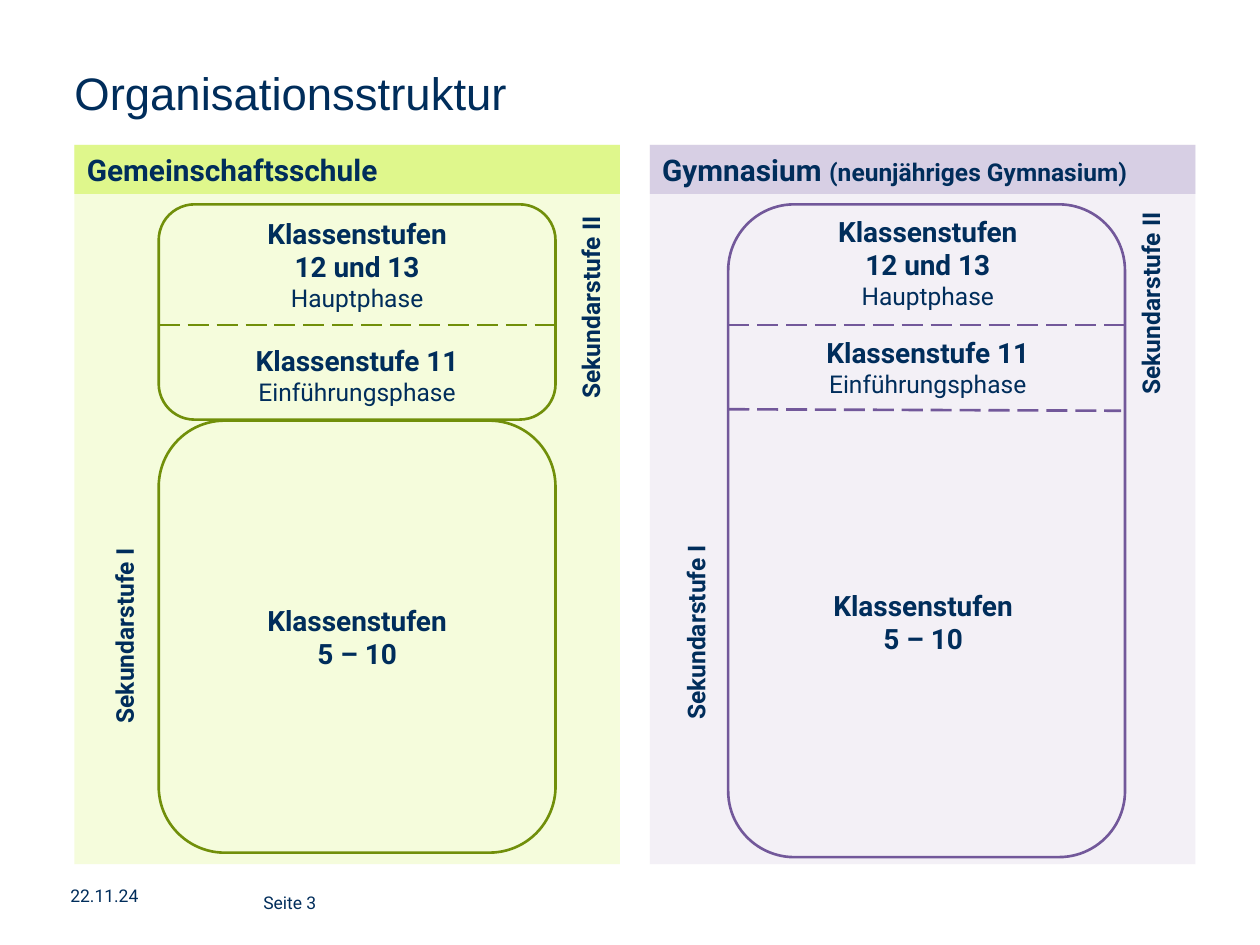
from lxml.etree import SubElement
from pptx import Presentation
from pptx.dml.color import RGBColor as RGB
from pptx.enum.dml import MSO_LINE
from pptx.enum.shapes import MSO_CONNECTOR as Link, MSO_SHAPE as Form
from pptx.enum.text import MSO_ANCHOR as Anchor, MSO_AUTO_SIZE as Fit, PP_ALIGN as Align
from pptx.oxml.ns import qn
from pptx.util import Cm, Pt

COLORS = {
    "navy": "002D5B",
    "lime": "EFFBC6", "lime head": "DFF78C", "lime line": "718F0A",
    "plum": "EBE7F1", "plum head": "D7CFE4", "plum line": "72589A",
}
HUES = {name: RGB.from_string(code) for name, code in COLORS.items()}
INSET = {"margin_left": 0, "margin_right": 0, "margin_top": 0, "margin_bottom": 0}


def write(shape, paras, align=Align.CENTER, gap=0, face="Roboto", **form):
    """Fill a shape with paragraphs, each a list of (text, size, bold)."""
    frame = shape.text_frame
    form = {"word_wrap": True, "vertical_anchor": Anchor.TOP, **form}
    for key, val in form.items():
        setattr(frame, key, val)
    for i, runs in enumerate(paras):
        para = frame.add_paragraph() if i else frame.paragraphs[0]
        para.alignment = align
        if i and gap:
            para.space_before = Pt(gap)
        for j, (text, size, bold) in enumerate(runs):
            for k, line in enumerate(text.split("\n")):
                if k:
                    para.add_line_break()
                if not line:
                    continue
                run = para.add_run()
                run.text = line
                look = {"name": face, "size": Pt(size), "bold": bold}
                for key, val in look.items():
                    setattr(run.font, key, val)
                run.font.color.rgb = HUES["navy"]


def draw(shapes, form, place, fill=None, line=None):
    """Add a preset shape with a plain fill or outline."""
    shape = shapes.add_shape(form, *map(Cm, place))
    shape.shadow.inherit = False
    if fill:
        shape.fill.solid()
        shape.fill.fore_color.rgb = HUES[fill]
    else:
        shape.fill.background()
    if line:
        shape.line.color.rgb = HUES[line]
        shape.line.width = Pt(1.5)
    else:
        shape.line.fill.background()
    return shape


deck = Presentation()
deck.slide_width, deck.slide_height = Cm(25.4), Cm(19.05)
slide = deck.slides.add_slide(deck.slide_layouts[5])

# Title
title = slide.shapes.title
spot = {"left": 1.5, "top": 1.47, "width": 22.4, "height": 2.26}
for key, val in spot.items():
    setattr(title, key, Cm(val))
write(title, [[("Organisationsstruktur", 26, False)]], Align.LEFT, face="Arial",
      auto_size=Fit.NONE, **INSET)
title.text_frame.paragraphs[0].line_spacing = 0.85

# Date and page number
for text, left, top in (("22.11.24", 1.42, 17.75), ("Seite 3", 5.31, 17.88)):
    box = slide.shapes.add_textbox(Cm(left), Cm(top), Cm(3.2), Cm(0.61))
    write(box, [[(text, 10, False)]], Align.LEFT, word_wrap=False,
          vertical_anchor=Anchor.MIDDLE, **INSET)

# Wording shared by both school types
UPPER = [
    [("Klassenstufen\n12 und 13\n", 16, True), ("Hauptphase", 14, False)],
    [("Klassenstufe 11\n", 16, True), ("Einführungsphase", 14, False)],
]
LOWER = [[("Klassenstufen\n5 – 10", 16, True)]]

# One entry per school type; places are left, top, width, height in cm
SCHOOLS = [
    {"hue": "lime", "left": 1.5,
     "head": [("Gemeinschaftsschule", 17, True)],
     "frames": [(3.2, 4.12, 8, 4.34), (3.2, 8.48, 8, 8.71)],
     "dashes": [(3.2, 6.55, 11.2, 6.55)],
     "upper": (3.2, 4.12, 8, 4.34), "gap": 17.7, "inset": 0.24,
     "lower": (3.2, 8.48, 8, 8.71),
     "sides": [("Sekundarstufe II", 11.9, 6.2), ("Sekundarstufe I", 2.5, 12.82)]},
    {"hue": "plum", "left": 13.1,
     "head": [("Gymnasium ", 17, True), ("(neunjähriges Gymnasium)", 14, True)],
     "frames": [(14.68, 4.12, 8, 13.16)],
     "dashes": [(14.68, 6.55, 22.68, 6.55), (14.68, 8.25, 22.6, 8.28)],
     "upper": (15.67, 4.19, 6.07, 5), "gap": 14, "inset": 0.13,
     "lower": (15.7, 11.71, 5.82, 1.65),
     "sides": [("Sekundarstufe II", 23.19, 6.12), ("Sekundarstufe I", 14.02, 12.75)]},
]

for school in SCHOOLS:
    hue, left = school["hue"], school["left"]
    group = slide.shapes.add_group_shape().shapes

    # Pale panel and its heading bar
    panel = draw(group, Form.RECTANGLE, (left, 2.92, 11, 14.5), hue)
    tint = panel.fill._xPr.find(qn("a:solidFill"))[0]
    SubElement(tint, qn("a:alpha")).set("val", "60000")
    bar = draw(group, Form.RECTANGLE, (left, 2.92, 11, 0.99), hue + " head")
    write(bar, [school["head"]], Align.LEFT, vertical_anchor=Anchor.MIDDLE)

    # Rounded frames and dashed dividers
    for place in school["frames"]:
        draw(group, Form.FLOWCHART_ALTERNATE_PROCESS, place, line=hue + " line")
    for ends in school["dashes"]:
        dash = group.add_connector(Link.STRAIGHT, *map(Cm, ends))
        dash.line.color.rgb = HUES[hue + " line"]
        dash.line.width = Pt(1.5)
        dash.line.dash_style = MSO_LINE.LONG_DASH
        SubElement(dash._element.spPr, qn("a:effectLst"))

    # Class levels
    upper = group.add_textbox(*map(Cm, school["upper"]))
    write(upper, UPPER, gap=school["gap"], margin_top=Cm(school["inset"]))
    lower = group.add_textbox(*map(Cm, school["lower"]))
    write(lower, LOWER, vertical_anchor=Anchor.MIDDLE)

    # Upright labels, placed by their centre
    for text, mid, row in school["sides"]:
        side = group.add_textbox(Cm(mid - 2.2), Cm(row - 0.3), Cm(4.4), Cm(0.6))
        side.rotation = 270
        write(side, [[(text, 14, True)]], word_wrap=False,
              vertical_anchor=Anchor.MIDDLE)

deck.save("out.pptx")
